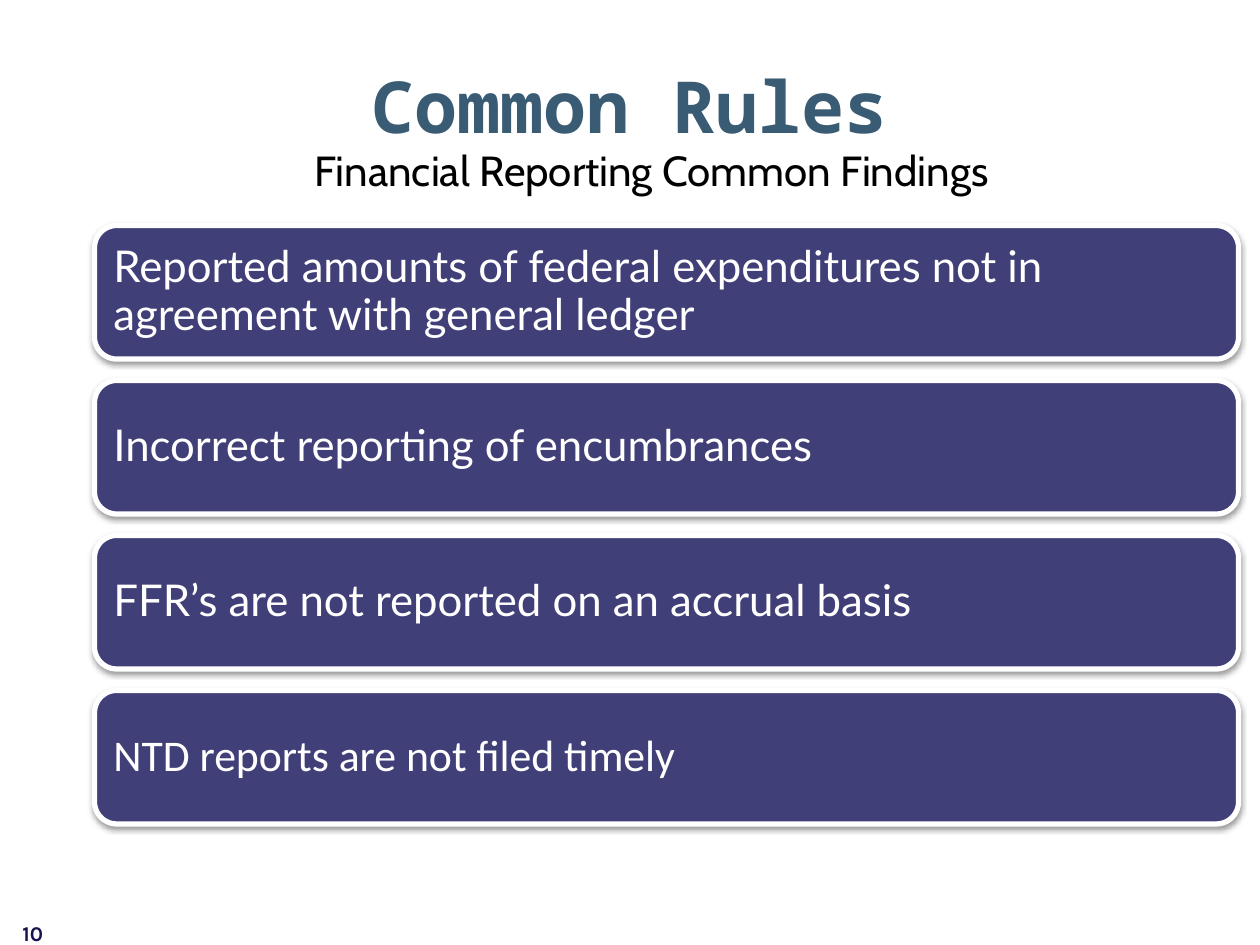
from lxml import etree
from pptx import Presentation
from pptx.dml.color import RGBColor
from pptx.enum.shapes import MSO_SHAPE
from pptx.enum.text import MSO_ANCHOR, PP_ALIGN
from pptx.oxml.ns import qn
from pptx.util import Inches, Pt

ROUND = MSO_SHAPE.ROUNDED_RECTANGLE
TOP, MIDDLE = MSO_ANCHOR.TOP, MSO_ANCHOR.MIDDLE
LEFT, CENTER = PP_ALIGN.LEFT, PP_ALIGN.CENTER

WHITE = RGBColor(0xFF, 0xFF, 0xFF)
BLACK = RGBColor(0, 0, 0)
PURPLE = RGBColor(0x41, 0x3F, 0x77)
TEAL = RGBColor(0x39, 0x5B, 0x74)
NAVY = RGBColor(0x17, 0x14, 0x4D)

# Content: text, box, alignment, top margin, font
LABELS = [
    ("Common Rules", (0.5, 0.48, 9, 1.07), CENTER, 0.01,
     {"name": "Noto Sans Mono", "size": Pt(41), "bold": True}, TEAL),
    ("Financial Reporting Common Findings", (1.13, 1.1, 8.08, 0.5), CENTER, 0.05,
     {"name": "Cabin", "size": Pt(24)}, BLACK),
    ("10", (0.08, 7.26, 2.33, 0.4), LEFT, 0.05,
     {"name": "Karla", "size": Pt(12), "bold": True}, NAVY),
]
FINDINGS = [
    ("Reported amounts of federal expenditures not in agreement with general ledger",
     "Lato"),
    ("Incorrect reporting of encumbrances", "Lato"),
    ("FFR’s are not reported on an accrual basis", "Lato"),
    ("NTD reports are not filed timely", "Calibri"),
]

# Card grid
CARD_X, CARD_Y, CARD_W, CARD_H = 0.75, 1.79, 9.08, 1.06
STEP = 1.23


def write(shape, text, font, color, align, anchor, side, top):
    frame = shape.text_frame
    frame.word_wrap = True
    margins = {"margin_left": side, "margin_right": side,
               "margin_top": top, "margin_bottom": top}
    for key, value in margins.items():
        setattr(frame, key, Inches(value))
    frame.vertical_anchor = anchor
    para = frame.paragraphs[0]
    para.alignment = align
    run = para.add_run()
    run.text = text
    for key, value in font.items():
        setattr(run.font, key, value)
    run.font.color.rgb = color
    return para


def add_shadow(shape):
    shape.shadow.inherit = False
    effects = shape.element.spPr.find(qn("a:effectLst"))
    outer = etree.SubElement(effects, qn("a:outerShdw"), blurRad=str(Pt(3.1)),
                             dist=str(Pt(1.6)), dir="5400000", rotWithShape="0")
    color = etree.SubElement(outer, qn("a:srgbClr"), val=str(BLACK))
    etree.SubElement(color, qn("a:alpha"), val="38000")


def main():
    deck = Presentation()
    deck.slide_width, deck.slide_height = Inches(10), Inches(7.5)
    slide = deck.slides.add_slide(deck.slide_layouts[6])

    # Finding cards
    for row, (text, face) in enumerate(FINDINGS):
        box = (CARD_X, CARD_Y + row * STEP, CARD_W, CARD_H)
        card = slide.shapes.add_shape(ROUND, *map(Inches, box))
        card.fill.solid()
        card.fill.fore_color.rgb = PURPLE
        card.line.color.rgb = WHITE
        card.line.width = Pt(3)
        add_shadow(card)
        font = {"name": face, "size": Pt(25)}
        para = write(card, text, font, WHITE, LEFT, MIDDLE, 0.1, 0.1)
        para.line_spacing = 0.9

    # Title, subtitle and page number
    for text, box, align, top, font, color in LABELS:
        label = slide.shapes.add_textbox(*map(Inches, box))
        write(label, text, font, color, align, TOP, 0.1, top)

    deck.save("out.pptx")


if __name__ == "__main__":
    main()
